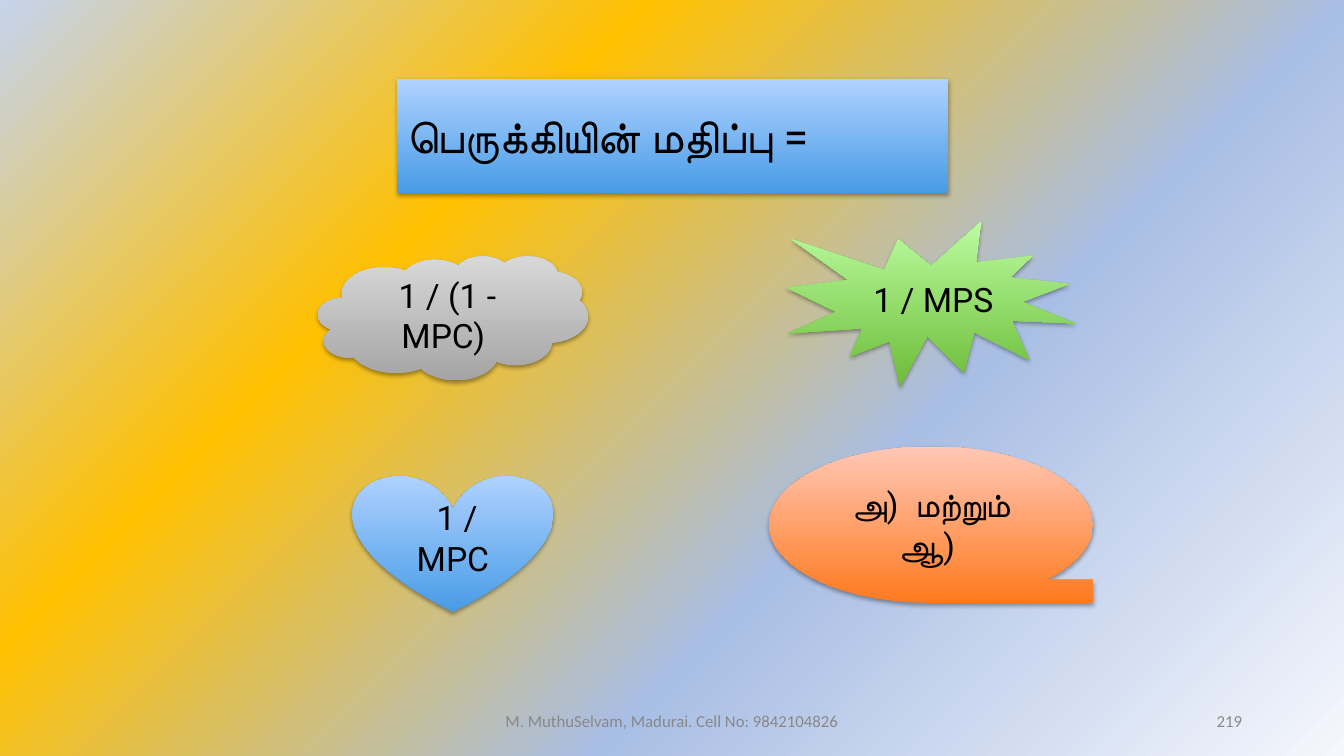
from dataclasses import dataclass

from lxml.etree import SubElement as Sub
from pptx import Presentation
from pptx.dml.color import RGBColor as RGB
from pptx.enum.shapes import MSO_SHAPE as Kind
from pptx.enum.text import MSO_ANCHOR as Anchor, MSO_AUTO_SIZE as Auto, PP_ALIGN as Align
from pptx.oxml.ns import qn
from pptx.util import Inches, Pt

WIDE, HIGH = Inches(13.33), Inches(7.5)
BLACK, GREY = RGB(0, 0, 0), RGB(0x88, 0x88, 0x88)
BLUE = RGB(0x49, 0x9C, 0xE7), RGB(0xB0, 0xD2, 0xFF)
STONE = RGB(0xA5, 0xA5, 0xA5), RGB(0xD8, 0xD8, 0xD8)
GREEN = RGB(0x6D, 0xBC, 0x38), RGB(0xBB, 0xFC, 0xA0)
CORAL = RGB(0xFF, 0x7A, 0x1F), RGB(0xFF, 0xC7, 0xB6)
BACK = {0: RGB(0xF5, 0xF7, 0xFC), 36: RGB(0xA9, 0xBE, 0xE4),
        69: RGB(0xFF, 0xC0, 0x00), 100: RGB(0xC5, 0xD3, 0xED)}

# Centres of the two answer columns, in percent of the slide width
LEFT, RIGHT = 33.7, 69.28


@dataclass
class Box:
    """Place in percent of the slide: centre across, top, width, height."""
    mid: float
    top: float
    wide: float
    high: float

    def frame(self) -> dict:
        return {"left": round(WIDE * (self.mid - self.wide / 2) / 100),
                "top": round(HIGH * self.top / 100),
                "width": round(WIDE * self.wide / 100),
                "height": round(HIGH * self.high / 100)}


@dataclass
class Answer:
    text: str
    kind: Kind
    box: Box
    tint: tuple


@dataclass
class Foot:
    text: str
    box: Box
    align: Align


TITLE = Box(50.03, 10.4, 40.96, 15.07)
ANSWERS = [
    Answer(" 1 / (1 - MPC)", Kind.CLOUD, Box(LEFT, 33.87, 20.1, 16.4), STONE),
    Answer(" 1 / MPS", Kind.EXPLOSION1, Box(RIGHT, 29.33, 21.53, 21.87), GREEN),
    Answer(" 1 / MPC", Kind.HEART, Box(LEFT, 62.8, 14.85, 18.13), BLUE),
    Answer("அ)  மற்றும் ஆ) ", Kind.FLOWCHART_SEQUENTIAL_ACCESS_STORAGE,
           Box(RIGHT, 59.07, 24.08, 20.67), CORAL),
]
FEET = [
    Foot("M. MuthuSelvam, Madurai. Cell No: 9842104826",
         Box(50, 92.67, 33.75, 5.33), Align.CENTER),
    Foot("219", Box(81.92, 92.67, 22.5, 5.33), Align.RIGHT),
]


def apply(item, values: dict) -> None:
    for name, value in values.items():
        setattr(item, name, value)


def blend(grad, stops: dict):
    """Replace the content of a gradient fill with the given stops."""
    for part in list(grad):
        grad.remove(part)
    row = Sub(grad, qn("a:gsLst"))
    for place, tint in stops.items():
        stop = Sub(row, qn("a:gs"), pos=str(place * 1000))
        Sub(stop, qn("a:srgbClr"), val=str(tint))


def paint(slide) -> None:
    """Fill the background from the bottom right corner."""
    slide.background.fill.gradient()
    grad = slide._element.xpath("p:cSld/p:bg/p:bgPr/a:gradFill")[0]
    blend(grad, BACK)
    way = Sub(grad, qn("a:path"), path="circle")
    Sub(way, qn("a:fillToRect"), l="100000", t="100000")
    Sub(grad, qn("a:tileRect"), r="-100000", b="-100000")


def style(shape, tint: tuple) -> None:
    """Give a shape its upward gradient and soft shadow."""
    shape.fill.gradient()
    shape.line.fill.background()
    props = shape._element.spPr
    grad = props.find(qn("a:gradFill"))
    blend(grad, dict(zip((0, 100), tint)))
    Sub(grad, qn("a:lin"), ang="16200000", scaled="0")
    effect = props.find(qn("a:effectLst"))
    if effect is None:
        effect = Sub(props, qn("a:effectLst"))
    shade = Sub(effect, qn("a:outerShdw"), blurRad="40000", dist="23000",
                dir="5400000", rotWithShape="0")
    Sub(Sub(shade, qn("a:srgbClr"), val=str(BLACK)), qn("a:alpha"), val="35000")


def write(shape, text: str, size: int, align: Align,
          face: str = "Roboto", tint: RGB = BLACK) -> None:
    frame = shape.text_frame
    apply(frame, {"text": text, "word_wrap": True, "auto_size": Auto.NONE,
                  "vertical_anchor": Anchor.MIDDLE})
    line = frame.paragraphs[0]
    line.alignment = align
    font = line.runs[0].font
    apply(font, {"name": face, "size": Pt(size)})
    font.color.rgb = tint


def head(slide) -> None:
    """Turn the title placeholder into a scroll."""
    title = slide.shapes.title
    apply(title, TITLE.frame())
    form = Sub(title._element.spPr, qn("a:prstGeom"), prst="horizontalScroll")
    Sub(form, qn("a:avLst"))
    style(title, BLUE)
    write(title, "பெருக்கியின் மதிப்பு =", 32, Align.LEFT)


def main() -> None:
    deck = Presentation()
    apply(deck, {"slide_width": WIDE, "slide_height": HIGH})
    slide = deck.slides.add_slide(deck.slide_layouts.get_by_name("Title Only"))
    paint(slide)
    head(slide)
    for item in ANSWERS:
        shape = slide.shapes.add_shape(item.kind, **item.box.frame())
        shape.shadow.inherit = False
        style(shape, item.tint)
        write(shape, item.text, 24, Align.CENTER)
    for foot in FEET:
        shape = slide.shapes.add_textbox(**foot.box.frame())
        write(shape, foot.text, 12, foot.align, "Calibri", GREY)
    deck.save("out.pptx")


if __name__ == "__main__":
    main()
